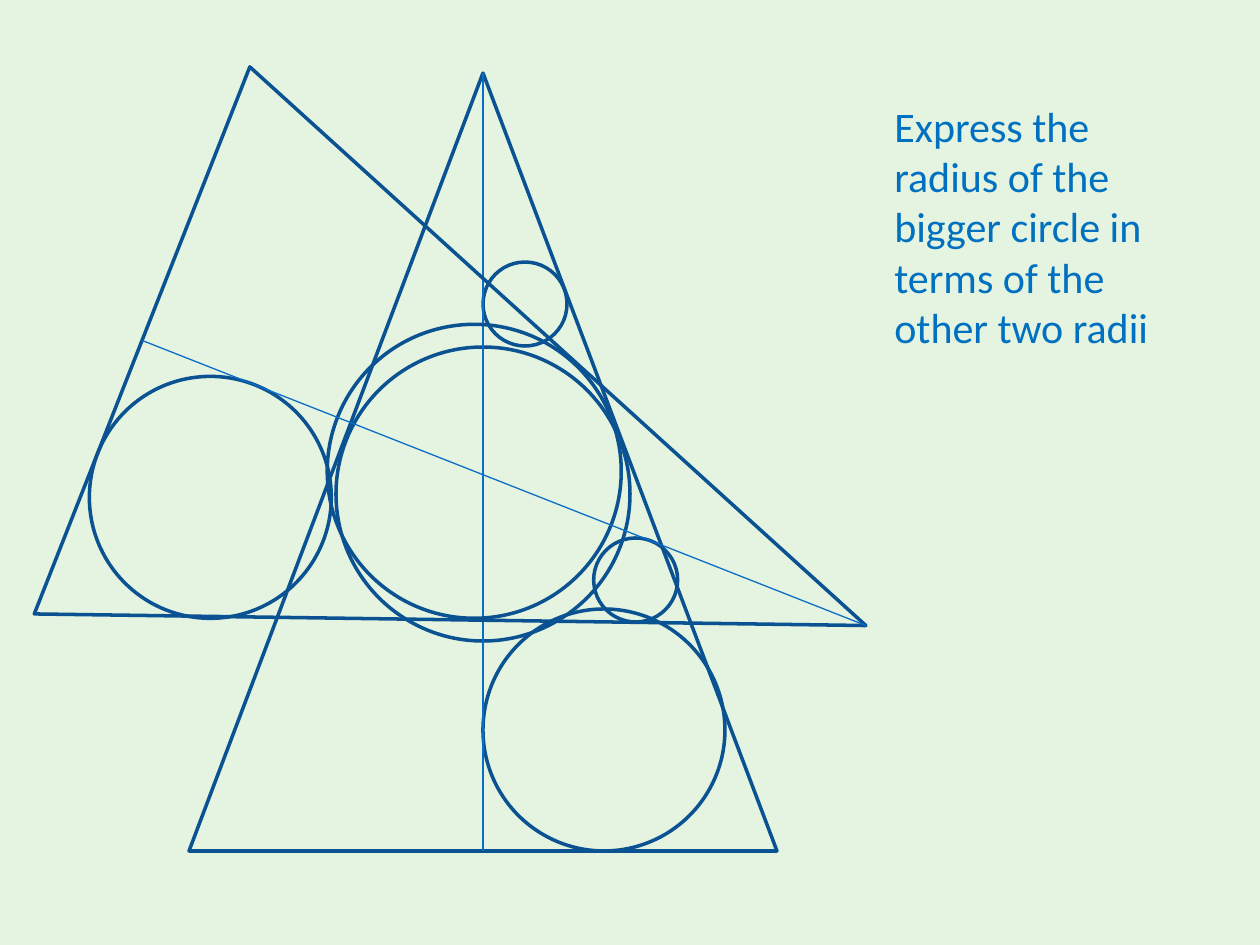
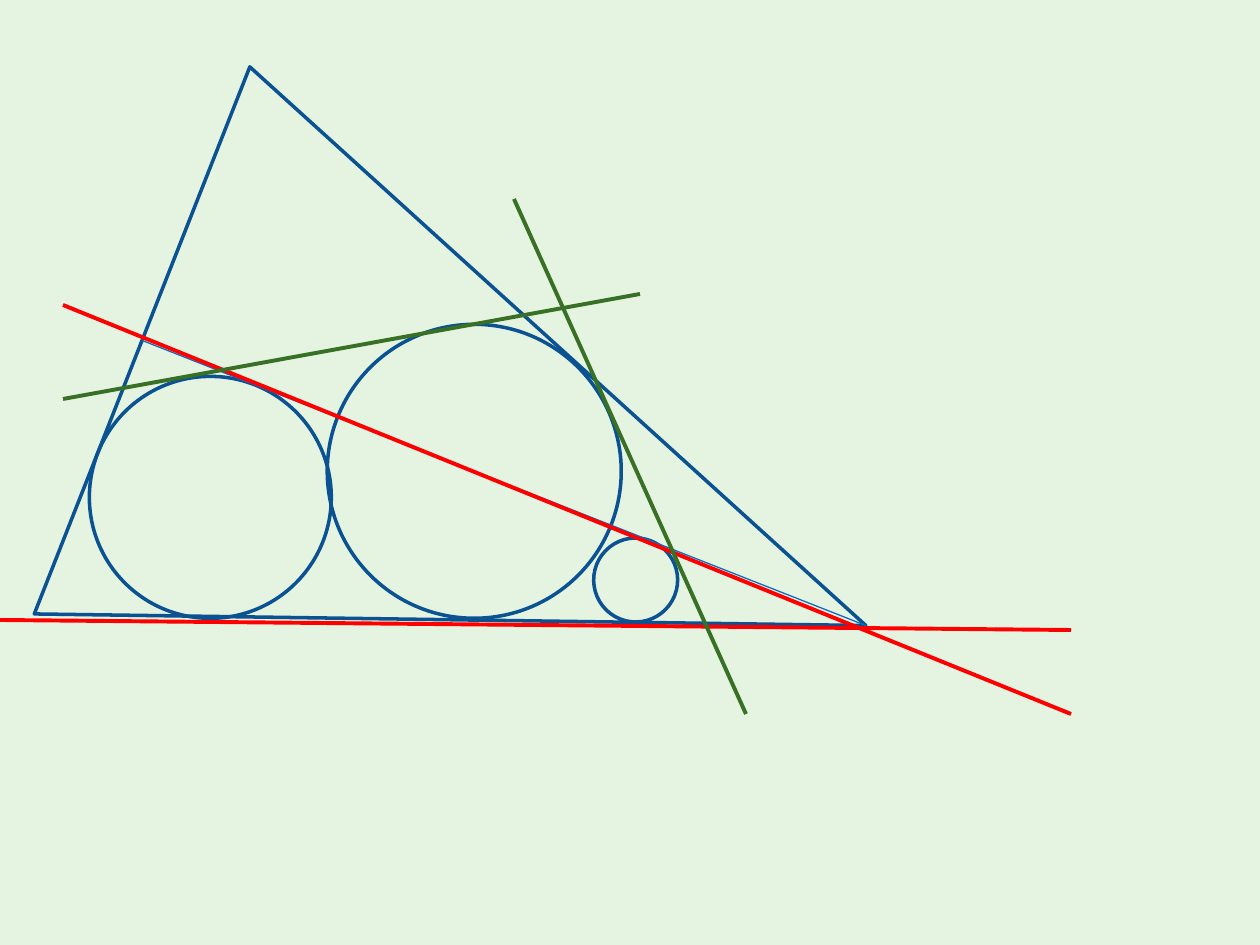
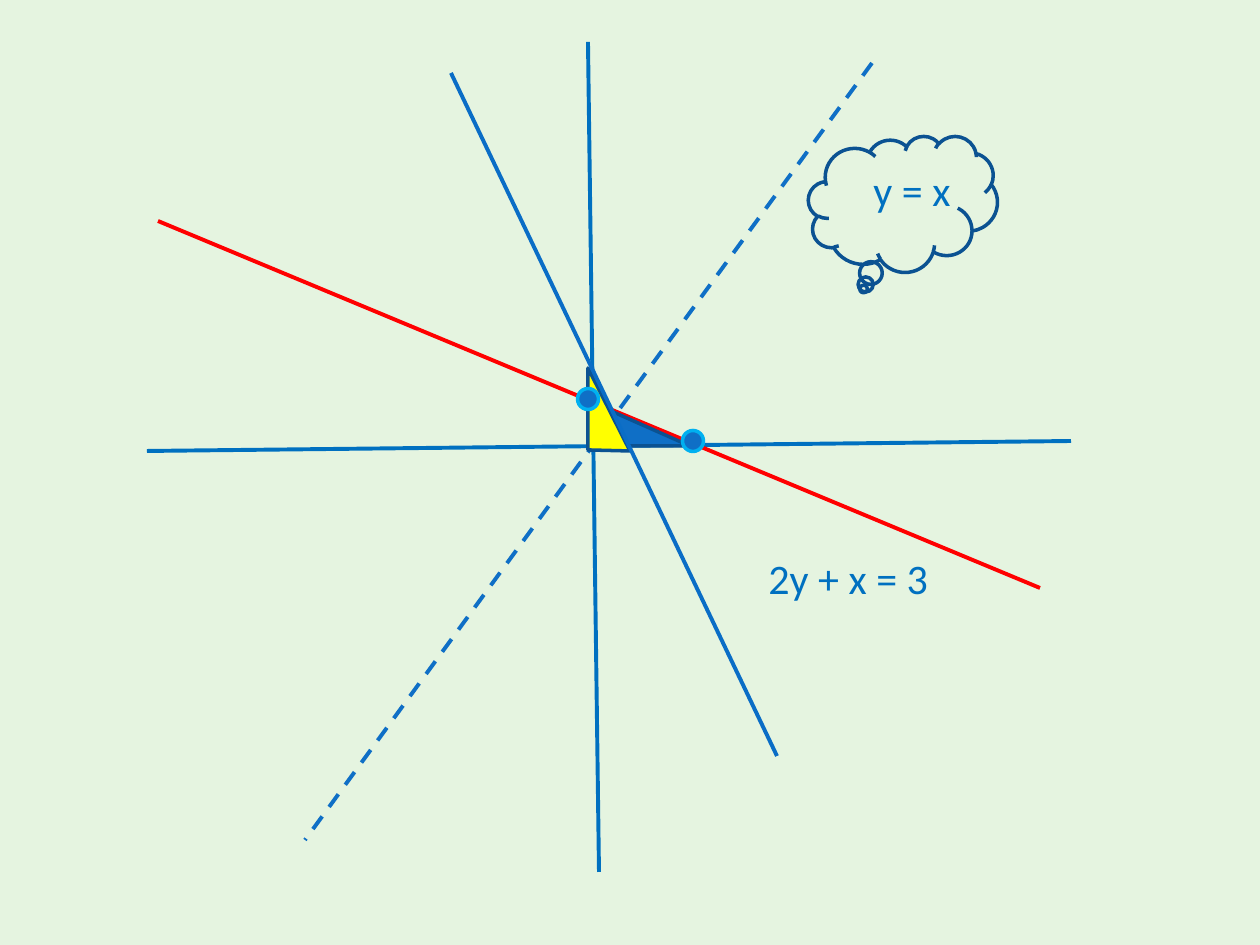
from math import cos, radians, sin
from pptx import Presentation
from pptx.dml.color import RGBColor
from pptx.enum.dml import MSO_LINE
from pptx.enum.shapes import MSO_CONNECTOR, MSO_SHAPE
from pptx.enum.text import MSO_AUTO_SIZE
from pptx.oxml.ns import qn
from pptx.util import Pt

PX = 914400 / 126
WIDTH, HEIGHT = 1260, 945
BACKGROUND = "E5F4E0"
NAVY, BLUE, MID_BLUE, AXIS_BLUE = "0B5292", "0070C0", "0F6FC6", "0A6DC6"
RED, GREEN, YELLOW, SKY = "FF0000", "387026", "FFFF00", "00B0F0"
OUTLINE, THIN, THICK = 2, 0.75, 2.25
TEXT_FORMAT = {"name": "Calibri", "size": Pt(24)}

TRIANGLE_SIZE = (588, 778)
INNER_CIRCLES = [(0, 32, 294), (42, -158, 84), (121, 268, 242)]
UPRIGHT = ((483, 462), 0)
TILTED = ((504, 483), 111.5)
DOT_SIZE = 21

SLIDES = [
    [
        ("figure", *UPRIGHT),
        ("text", "Express the radius of the bigger circle in terms of the other two radii",
         (882, 94, 305, 267)),
        ("figure", *TILTED),
    ],
    [
        ("figure", *TILTED),
        ("line", (63, 305), (1071, 714), RED),
        ("line", (0, 620), (1071, 630), RED),
        ("line", (514, 199), (746, 714), GREEN),
        ("line", (63, 399), (640, 294), GREEN),
    ],
    [
        ("line", (588, 42), (599, 872), BLUE),
        ("line", (1071, 441), (147, 451), BLUE),
        ("line", (158, 221), (1040, 588), RED),
        ("line", (872, 63), (305, 840), MID_BLUE, THICK, MSO_LINE.DASH),
        ("text", "y = x", (861, 158, 189, 63)),
        ("text", "2y + x = 3", (756, 546, 273, 63)),
        ("polygon", [(593, 403), (595, 446), (690, 446)], MID_BLUE),
        ("polygon", [(630, 451), (588, 450), (588, 368)], YELLOW),
        ("shape", MSO_SHAPE.CLOUD_CALLOUT, (903, 204), (189, 136)),
        ("line", (451, 73), (777, 756), AXIS_BLUE),
        ("dot", (693, 441)),
        ("dot", (588, 399)),
    ],
]


def emu(*lengths):
    return [round(length * PX) for length in lengths]


def color(value):
    return RGBColor.from_string(value)


def set_attributes(target, values):
    for name, value in values.items():
        setattr(target, name, value)


def style_shape(shape, line_color, fill_color=None):
    shape.shadow.inherit = False
    if fill_color:
        shape.fill.solid()
        shape.fill.fore_color.rgb = color(fill_color)
    else:
        shape.fill.background()
    shape.line.color.rgb = color(line_color)
    shape.line.width = Pt(OUTLINE)


def add_shape(slide, kind, center, size, angle=0, line_color=NAVY, fill_color=None):
    left, top = (middle - length / 2 for middle, length in zip(center, size))
    shape = slide.shapes.add_shape(kind, *emu(left, top, *size))
    shape.rotation = angle
    style_shape(shape, line_color, fill_color)


def add_dot(slide, center):
    add_shape(slide, MSO_SHAPE.OVAL, center, (DOT_SIZE, DOT_SIZE), 0, SKY, MID_BLUE)


def add_polygon(slide, points, fill_color):
    builder = slide.shapes.build_freeform(*points[0], scale=PX)
    builder.add_line_segments(points[1:], close=True)
    style_shape(builder.convert_to_shape(), NAVY, fill_color)


def add_line(slide, start, end, line_color, width=THICK, dash=None):
    connector = slide.shapes.add_connector(MSO_CONNECTOR.STRAIGHT, *emu(*start, *end))
    connector.line.color.rgb = color(line_color)
    set_attributes(connector.line, {"width": Pt(width), "dash_style": dash})
    properties = connector._element.spPr
    properties.append(properties.makeelement(qn("a:effectLst"), {}))


def add_text(slide, text, box):
    frame = slide.shapes.add_textbox(*emu(*box)).text_frame
    set_attributes(frame, {"word_wrap": True, "auto_size": MSO_AUTO_SIZE.SHAPE_TO_FIT_TEXT})
    run = frame.paragraphs[0].add_run()
    run.text = text
    set_attributes(run.font, TEXT_FORMAT)
    run.font.color.rgb = color(BLUE)


def add_figure(slide, center, angle):
    cosine, sine = cos(radians(angle)), sin(radians(angle))

    def place(x, y):
        return center[0] + x * cosine - y * sine, center[1] + x * sine + y * cosine

    add_shape(slide, MSO_SHAPE.ISOSCELES_TRIANGLE, center, TRIANGLE_SIZE, angle)
    for x, y, diameter in INNER_CIRCLES:
        add_shape(slide, MSO_SHAPE.OVAL, place(x, y), (diameter, diameter), angle)
    half_height = TRIANGLE_SIZE[1] / 2
    add_line(slide, place(0, -half_height), place(0, half_height), AXIS_BLUE, THIN)


DRAW = {"figure": add_figure, "shape": add_shape, "dot": add_dot,
        "polygon": add_polygon, "line": add_line, "text": add_text}


def main():
    presentation = Presentation()
    presentation.slide_width, presentation.slide_height = emu(WIDTH, HEIGHT)
    background = presentation.slide_master.background.fill
    background.solid()
    background.fore_color.rgb = color(BACKGROUND)
    for parts in SLIDES:
        slide = presentation.slides.add_slide(presentation.slide_layouts[6])
        for kind, *values in parts:
            DRAW[kind](slide, *values)
    presentation.save("out.pptx")


if __name__ == "__main__":
    main()
